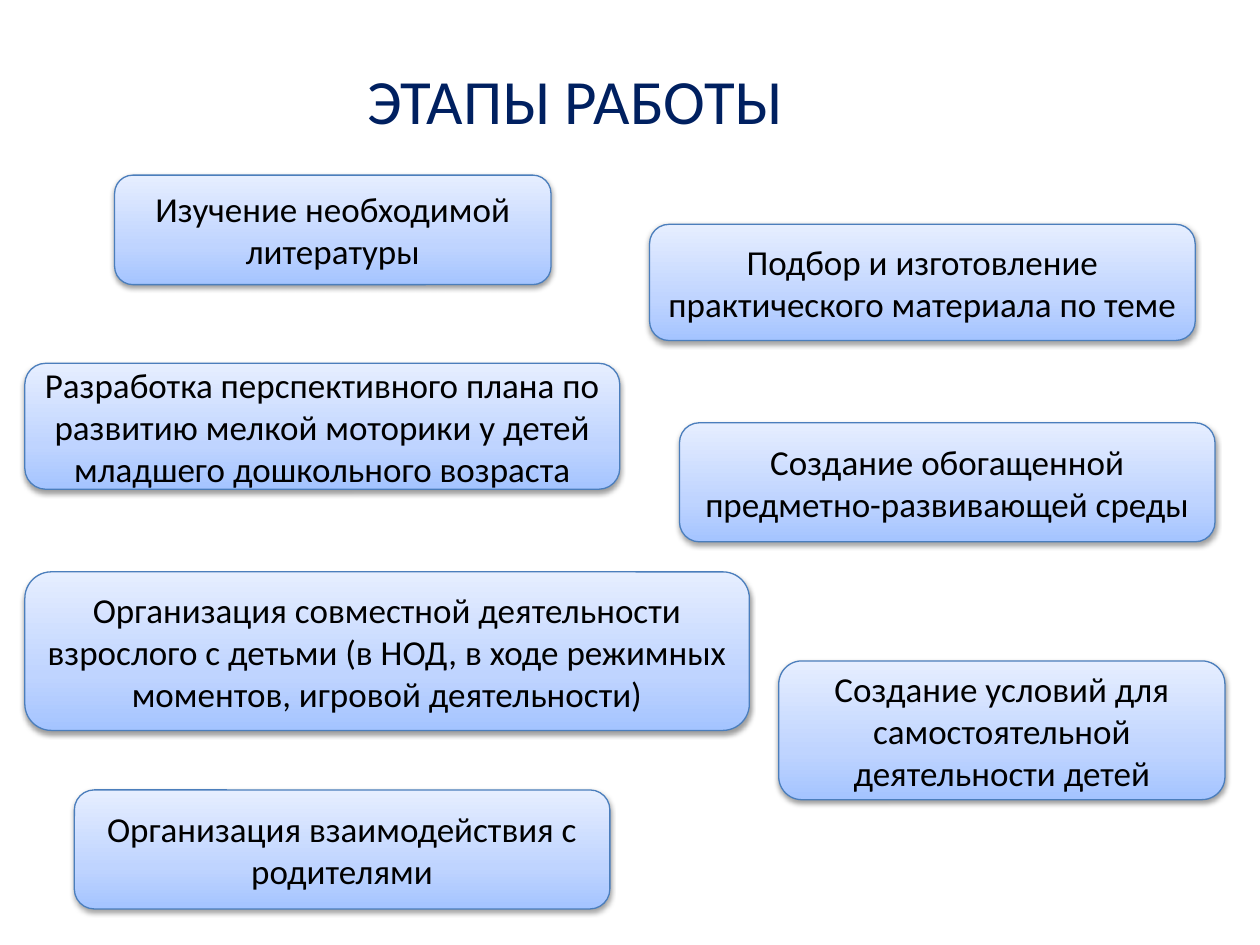
import copy
from dataclasses import dataclass

import lxml.etree
import pptx
import pptx.dml.color
import pptx.enum.shapes
import pptx.enum.text
import pptx.oxml.ns
import pptx.util

COLORS = {
    "title": "002060",
    "text": "000000",
    "outline": "4B7EBC",
    "shadow": "000000",
    "bottom": "A4C4FF",
    "middle": "BFD4FF",
    "top": "E6EEFF",
}
GRADIENT = [(0, "bottom"), (0.35, "middle"), (1, "top")]
FONT = "Calibri"


@dataclass
class Stage:
    left: float
    top: float
    width: float
    height: float
    text: str


STAGES = [
    Stage(65.5, 100.1, 249.4, 62.6, "Изучение необходимой литературы"),
    Stage(371.2, 128.2, 311.8, 66.4, "Подбор и изготовление практического материала по теме"),
    Stage(14.2, 207.6, 340, 72, "Разработка перспективного плана по развитию мелкой моторики "
          "у детей младшего дошкольного возраста"),
    Stage(388.3, 241.6, 306, 68, "Создание обогащенной предметно-развивающей среды"),
    Stage(14.2, 326.8, 414, 90.6, "Организация совместной деятельности взрослого с детьми "
          "(в НОД, в ходе режимных моментов, игровой деятельности)"),
    Stage(445, 377.7, 255, 79.3, "Создание условий для самостоятельной деятельности детей"),
    Stage(42.5, 451.4, 306, 68, "Организация взаимодействия с родителями"),
]


def rgb(name: str) -> pptx.dml.color.RGBColor:
    return pptx.dml.color.RGBColor.from_string(COLORS[name])


def add_child(parent, tag: str, **attributes: str):
    return lxml.etree.SubElement(parent, pptx.oxml.ns.qn(tag), attributes)


def write_text(shape, text: str, size: float, color: str) -> None:
    frame = shape.text_frame
    frame.word_wrap = True
    frame.text = text
    para = frame.paragraphs[0]
    para.alignment = pptx.enum.text.PP_ALIGN.CENTER
    for span in para.runs:
        span.font.name = FONT
        span.font.size = pptx.util.Pt(size)
        span.font.color.rgb = rgb(color)


def fill_gradient(shape) -> None:
    shape.fill.gradient()
    shape.fill.gradient_angle = 90
    stop_list = shape._element.spPr.find(".//" + pptx.oxml.ns.qn("a:gsLst"))
    stop_list.insert(1, copy.deepcopy(stop_list[0]))
    for stop, (position, color) in zip(shape.fill.gradient_stops, GRADIENT):
        stop.position = position
        stop.color.rgb = rgb(color)


def cast_shadow(shape) -> None:
    shape.shadow.inherit = False
    effects = shape._element.spPr.find(pptx.oxml.ns.qn("a:effectLst"))
    shadow = add_child(
        effects, "a:outerShdw", blurRad=str(pptx.util.Pt(3.1)),
        dist=str(pptx.util.Pt(1.6)), dir="5400000", rotWithShape="0",
    )
    color = add_child(shadow, "a:srgbClr", val=COLORS["shadow"])
    add_child(color, "a:alpha", val="38000")


def add_stage(page, stage: Stage) -> None:
    lengths = (stage.left, stage.top, stage.width, stage.height)
    box = page.shapes.add_shape(
        pptx.enum.shapes.MSO_SHAPE.ROUNDED_RECTANGLE, *map(pptx.util.Pt, lengths)
    )
    fill_gradient(box)
    box.line.color.rgb = rgb("outline")
    box.line.width = pptx.util.Pt(0.75)
    cast_shadow(box)
    box.text_frame.vertical_anchor = pptx.enum.text.MSO_ANCHOR.MIDDLE
    write_text(box, stage.text, 20, "text")


def add_title(page) -> None:
    box = page.shapes.add_textbox(*map(pptx.util.Pt, (133.2, 31.7, 391, 51)))
    write_text(box, "ЭТАПЫ РАБОТЫ", 36, "title")
    box.text_frame.auto_size = pptx.enum.text.MSO_AUTO_SIZE.SHAPE_TO_FIT_TEXT


def main() -> None:
    deck = pptx.Presentation()
    deck.slide_width = pptx.util.Pt(720)
    deck.slide_height = pptx.util.Pt(540)
    page = deck.slides.add_slide(deck.slide_layouts[6])
    add_title(page)
    for stage in STAGES:
        add_stage(page, stage)
    deck.save("out.pptx")


if __name__ == "__main__":
    main()
